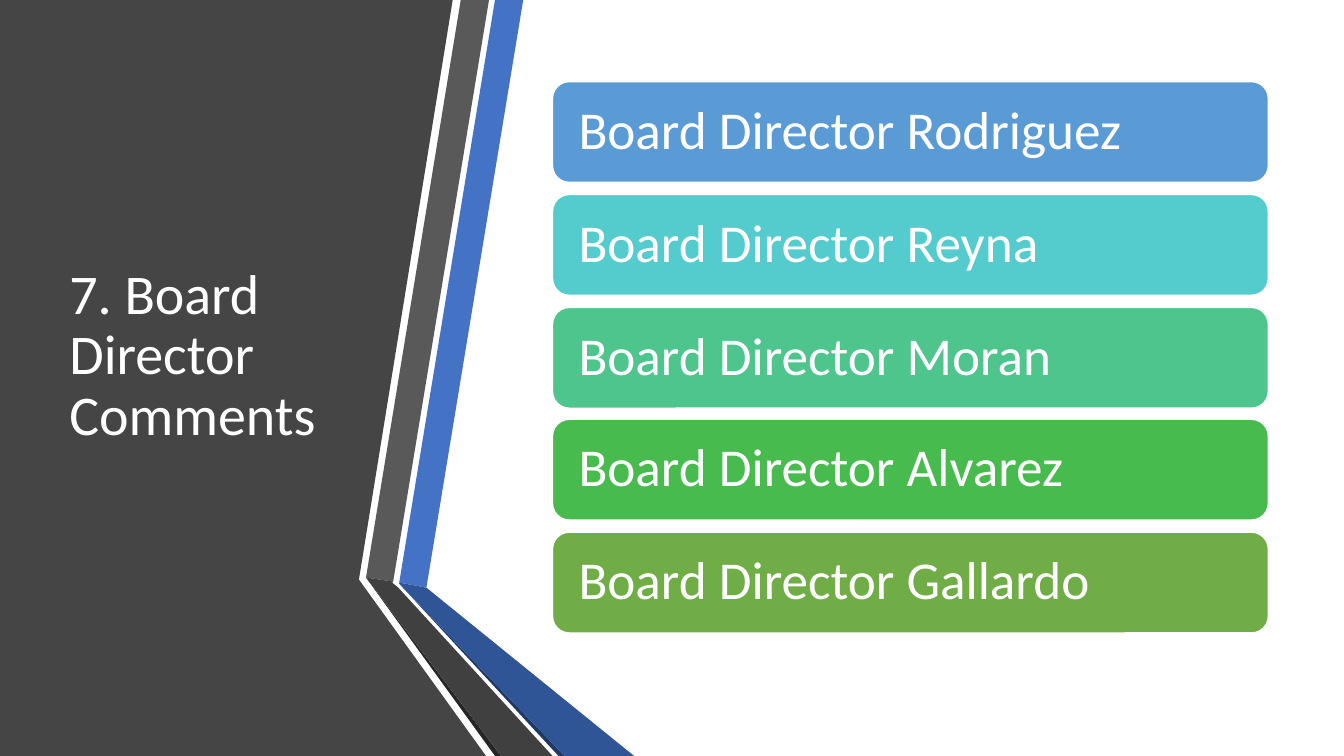
from pptx import Presentation
from pptx.dml.color import RGBColor
from pptx.enum.shapes import MSO_SHAPE
from pptx.enum.text import MSO_ANCHOR, PP_ALIGN
from pptx.util import Pt

PX = 9144  # EMU per px, 100 px to the inch
ROUNDED = MSO_SHAPE.ROUNDED_RECTANGLE
MIDDLE = MSO_ANCHOR.MIDDLE
LEFT = PP_ALIGN.LEFT
FONT = "Calibri"
WHITE = "FFFFFF"

# Side panel and folded ribbons, back to front: colour and outline
PANEL_AND_RIBBONS = [
    ("454545", [(0, 0), (449, 0), (356, 575), (482, 750), (0, 750)]),
    ("4472C4", [(396, 578), (423, 583), (519, 0), (491, 0)]),
    ("595959", [(485, 0), (457, 0), (363, 573), (390, 577)]),
    ("262626", [(363, 573), (491, 750), (497, 750)]),
    ("203864", [(396, 579), (554, 750), (560, 750)]),
    ("2F5597", [(396, 579), (560, 750), (629, 750), (423, 583), (396, 578)]),
    ("404040", [(548, 750), (395, 583), (389, 578), (390, 577), (363, 573),
                (497, 750)]),
]

DIRECTORS = [
    ("Rodriguez", "5B9BD5"),
    ("Reyna", "54CCCD"),
    ("Moran", "4DC58D"),
    ("Alvarez", "48BB4F"),
    ("Gallardo", "70AD47"),
]
CARD_LEFT, CARD_TOP, CARD_WIDTH, CARD_HEIGHT = 548, 81, 710, 100
FIRST_TO_LAST = 447


def rgb(code):
    return RGBColor.from_string(code)


def px(*lengths):
    return [length * PX for length in lengths]


def paint(shape, colour):
    shape.shadow.inherit = False
    shape.fill.solid()
    shape.fill.fore_color.rgb = rgb(colour)


def write(shape, text, size, inset):
    frame = shape.text_frame
    frame.text = text
    frame.word_wrap = True
    frame.vertical_anchor = MIDDLE
    frame.margin_left = frame.margin_right = inset * PX
    paragraph = frame.paragraphs[0]
    paragraph.alignment = LEFT
    paragraph.line_spacing = 0.9
    font = paragraph.runs[0].font
    font.name = FONT
    font.size = Pt(size)
    font.color.rgb = rgb(WHITE)


def add_outline(slide, colour, points):
    builder = slide.shapes.build_freeform(*points[0], scale=PX)
    builder.add_line_segments(points[1:], close=True)
    outline = builder.convert_to_shape()
    paint(outline, colour)
    outline.line.fill.background()


def add_title(slide, text):
    title = slide.shapes.add_textbox(*px(59, 75, 304, 558))
    write(title, text, 40, 10)


def add_card(slide, top, text, colour):
    card = slide.shapes.add_shape(
        ROUNDED, *px(CARD_LEFT, top, CARD_WIDTH, CARD_HEIGHT))
    paint(card, colour)
    card.line.color.rgb = rgb(WHITE)
    card.line.width = Pt(1)
    write(card, text, 38, 21)


def main():
    deck = Presentation()
    deck.slide_width, deck.slide_height = px(1333, 750)
    slide = deck.slides.add_slide(deck.slide_layouts[6])

    # Left side
    for colour, points in PANEL_AND_RIBBONS:
        add_outline(slide, colour, points)
    add_title(slide, "7. Board Director Comments")

    # Evenly spaced director cards
    for index, (surname, colour) in enumerate(DIRECTORS):
        top = CARD_TOP + round(index * FIRST_TO_LAST / (len(DIRECTORS) - 1))
        add_card(slide, top, f"Board Director {surname}", colour)

    deck.save("out.pptx")


if __name__ == "__main__":
    main()
